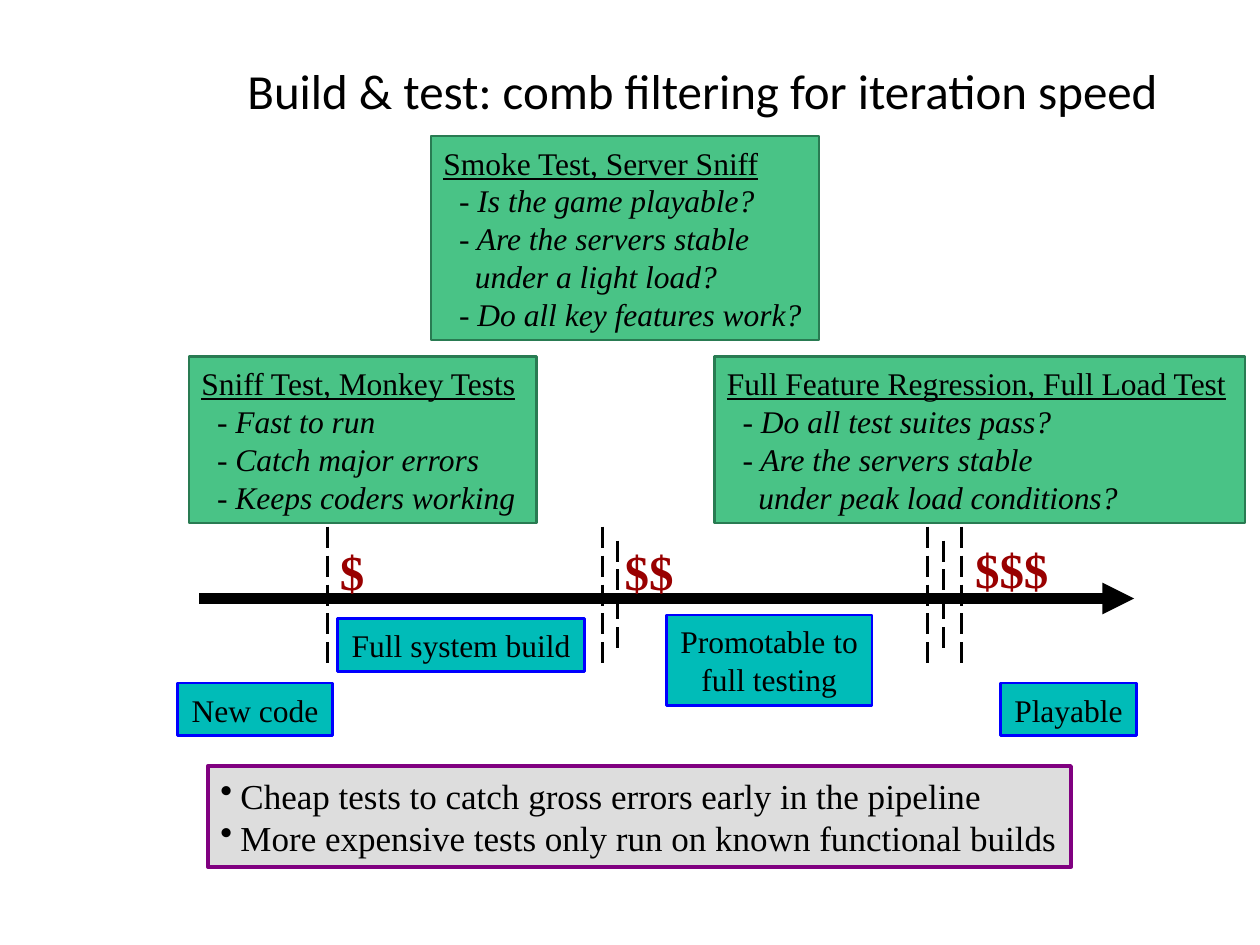
from lxml import etree
from pptx import Presentation
from pptx.dml.color import RGBColor
from pptx.enum.dml import MSO_LINE
from pptx.enum.shapes import MSO_CONNECTOR, MSO_SHAPE
from pptx.enum.text import MSO_ANCHOR, MSO_AUTO_SIZE, PP_ALIGN
from pptx.oxml.ns import qn
from pptx.util import Inches, Pt

STRAIGHT = MSO_CONNECTOR.STRAIGHT
RECTANGLE = MSO_SHAPE.RECTANGLE
LONG_DASH = MSO_LINE.LONG_DASH
LEFT, CENTER = PP_ALIGN.LEFT, PP_ALIGN.CENTER
TOP, MIDDLE = MSO_ANCHOR.TOP, MSO_ANCHOR.MIDDLE
FIT, FIXED = MSO_AUTO_SIZE.SHAPE_TO_FIT_TEXT, MSO_AUTO_SIZE.NONE

COLUMNS, ROWS = 100, 75  # grid cells of a tenth of an inch
INDENT = Pt(9)
BULLET_INDENT = Inches(0.16)


def color(hex_string):
    return RGBColor.from_string(hex_string)


class PipelinePage:
    """Style and current slide; positions are in grid columns and rows."""

    font = "Times New Roman"
    title_font = "Calibri"
    ink = "000000"
    test_colors = ("49C386", "297B52")
    stage_colors = ("00BCB8", "0000FF")
    summary_colors = ("DDDDDD", "800080")
    cost_color = "990000"

    def __init__(self, deck):
        self.cell_width = deck.slide_width / COLUMNS
        self.cell_height = deck.slide_height / ROWS
        self.page = deck.slides.add_slide(deck.slide_layouts[6])

    def place(self, column, row):
        return round(column * self.cell_width), round(row * self.cell_height)

    def frame(self, area, colors, line_width=1.5):
        """Add a filled, outlined rectangle, or a plain text box without colors."""
        position, size = self.place(*area[:2]), self.place(*area[2:])
        if colors is None:
            return self.page.shapes.add_textbox(*position, *size)
        box = self.page.shapes.add_shape(RECTANGLE, *position, *size)
        box.shadow.inherit = False
        fill, line = colors
        box.fill.solid()
        box.fill.fore_color.rgb = color(fill)
        box.line.color.rgb = color(line)
        box.line.width = Pt(line_width)
        return box

    def set_text(self, box, lines, size, align=LEFT, anchor=TOP, font=None, ink=None, bold=None):
        frame = box.text_frame
        frame.word_wrap = False
        frame.auto_size = FIT
        frame.vertical_anchor = anchor
        frame.text = "\n".join(lines)
        for para in frame.paragraphs:
            para.alignment = align
            para.font.name = font or self.font
            para.font.size = Pt(size)
            para.font.color.rgb = color(ink or self.ink)
            para.font.bold = bold
        return frame

    def title(self, text, area):
        box = self.frame(area, None)
        frame = self.set_text(box, [text], 28, CENTER, MIDDLE, self.title_font)
        frame.word_wrap = True
        frame.auto_size = FIXED

    def stage(self, lines, area):
        self.set_text(self.frame(area, self.stage_colors), lines, 18, CENTER, MIDDLE)

    def test(self, heading, details, area):
        """Add a test box; a detail without a dash continues the one above."""
        box = self.frame(area, self.test_colors)
        frame = self.set_text(box, [heading, *details], 18, anchor=MIDDLE)
        first, *rest = frame.paragraphs
        first.font.underline = True
        for para in rest:
            para.font.italic = True
            level = 1 if para.text.startswith("-") else 2
            para._p.get_or_add_pPr().set("marL", str(INDENT * level))

    def cost(self, text, area):
        self.set_text(self.frame(area, None), [text], 28, ink=self.cost_color, bold=True)

    def summary(self, lines, area):
        box = self.frame(area, self.summary_colors, 2.25)
        frame = self.set_text(box, lines, 20, anchor=MIDDLE)
        for para in frame.paragraphs:
            properties = para._p.get_or_add_pPr()
            properties.set("marL", str(BULLET_INDENT))
            properties.set("indent", str(-BULLET_INDENT))
            bullet = etree.Element(qn("a:buChar"), char="•")
            properties.insert(0, bullet)

    def line(self, start, end, width):
        line = self.page.shapes.add_connector(STRAIGHT, *self.place(*start), *self.place(*end))
        line.line.color.rgb = color(self.ink)
        line.line.width = Pt(width)
        etree.SubElement(line._element.spPr, qn("a:effectLst"))
        return line

    def timeline(self, start, end):
        stroke = self.line(start, end, 6).line._get_or_add_ln()
        etree.SubElement(stroke, qn("a:tailEnd")).set("type", "triangle")

    def comb_tooth(self, column, inset=0):
        tooth = self.line((column, 41.8 + inset), (column, 53.1 - inset), 1.5)
        tooth.line.dash_style = LONG_DASH


def main():
    deck = Presentation()
    deck.slide_width, deck.slide_height = Inches(10), Inches(7.5)
    page = PipelinePage(deck)

    page.title("Build & test: comb filtering for iteration speed", (14, 2.5, 83.5, 9.2))
    page.timeline((15.8, 47.5), (90, 47.5))

    for column in (26, 47.8, 73.6, 76.3):
        page.comb_tooth(column)
    for column in (49, 74.9):
        page.comb_tooth(column, inset=1.1)

    tests = [
        ("Sniff Test, Monkey Tests",
         ["- Fast to run", "- Catch major errors", "- Keeps coders working"],
         (15, 28.3, 27.6, 13.2)),
        ("Smoke Test, Server Sniff",
         ["- Is the game playable?", "- Are the servers stable",
          "under a light load?", "- Do all key features work?"],
         (34.2, 10.8, 30.8, 16.2)),
        ("Full Feature Regression, Full Load Test",
         ["- Do all test suites pass?", "- Are the servers stable",
          "under peak load conditions?"],
         (56.7, 28.3, 42.1, 13.2)),
    ]
    for heading, details, area in tests:
        page.test(heading, details, area)

    stages = [
        (["New code"], (14.1, 54.2, 12.3, 4.2)),
        (["Full system build"], (26.8, 49.1, 19.6, 4.2)),
        (["Promotable to", "full testing"], (52.9, 48.8, 16.3, 7.2)),
        (["Playable"], (79.4, 54.2, 10.8, 4.2)),
    ]
    for lines, area in stages:
        page.stage(lines, area)

    costs = [("$", 26, 42.5, 4), ("$$", 48.6, 42.5, 5.9), ("$$$", 76.4, 42.3, 7.8)]
    for text, column, row, width in costs:
        page.cost(text, (column, row, width, 5.7))

    page.summary(
        ["Cheap tests to catch gross errors early in the pipeline",
         "More expensive tests only run on known functional builds"],
        (16.5, 60.8, 68.5, 8))

    deck.save("out.pptx")


if __name__ == "__main__":
    main()
